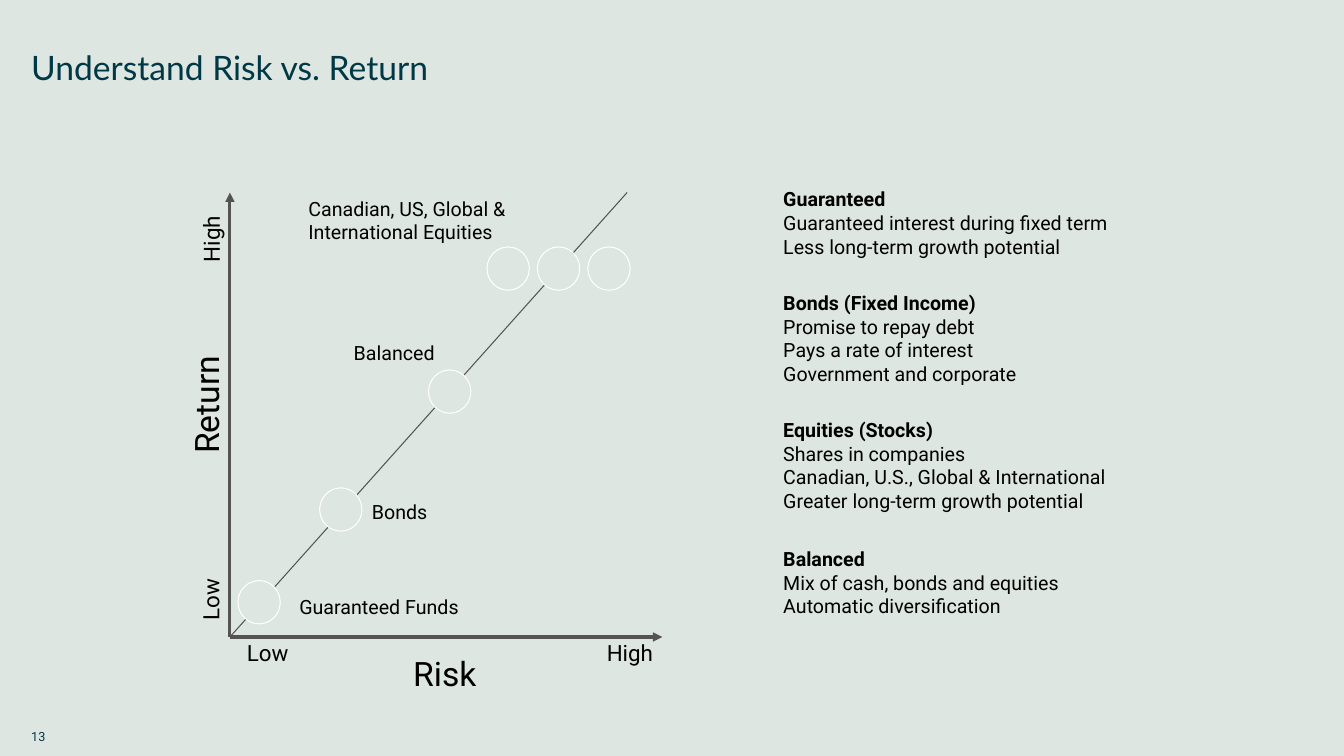
from lxml.etree import SubElement
from pptx import Presentation
from pptx.dml.color import RGBColor
from pptx.enum.shapes import MSO_CONNECTOR as Connector, MSO_SHAPE as Shape
from pptx.enum.text import MSO_ANCHOR as Anchor, MSO_AUTO_SIZE as AutoSize
from pptx.oxml.ns import qn
from pptx.util import Emu, Pt

PX = 9144
PAPER, TEAL, GREY, BLACK, WHITE = "DDE6E1", "003846", "545454", "000000", "FFFFFF"


def px(length):
    """Turn px (100 to the inch) into EMU."""
    return Emu(length * PX)


def color(value):
    """Turn a hex string into a colour."""
    return RGBColor.from_string(value)


def write(paragraph, text, size=14, bold=False, font="Roboto", ink=BLACK, spacing=None):
    """Add formatted text to a paragraph."""
    run = paragraph.add_run()
    run.text = text
    run.font.size, run.font.bold, run.font.name = Pt(size), bold, font
    run.font.color.rgb = color(ink)
    if spacing:
        paragraph.line_spacing = spacing


class RiskSlide:
    """Holds the style and the current slide."""

    def __init__(self, deck):
        """Add a blank slide on the paper colour."""
        self.slide = deck.slides.add_slide(deck.slide_layouts[6])
        self.slide.background.fill.solid()
        self.slide.background.fill.fore_color.rgb = color(PAPER)

    def frame(self, left, top, width, height, wrap=False, turn=0):
        """Add a text box and return its text frame."""
        box = self.slide.shapes.add_textbox(px(left), px(top), px(width), px(height))
        box.rotation = turn
        box.text_frame.word_wrap = wrap
        return box.text_frame

    def label(self, lines, left, top, width, height, wrap=False, turn=0,
              headed=False, **style):
        """Add lines of text, the first one bold when headed."""
        frame = self.frame(left, top, width, height, wrap, turn)
        frame.auto_size = AutoSize.SHAPE_TO_FIT_TEXT
        for index, line in enumerate(lines):
            paragraph = frame.add_paragraph() if index else frame.paragraphs[0]
            write(paragraph, line, bold=headed and index == 0, **style)

    def heading(self, text, left, top, width, height, inset=0, anchor=Anchor.TOP, **style):
        """Add text without side margins."""
        frame = self.frame(left, top, width, height, wrap=True)
        frame.margin_left = frame.margin_right = frame.margin_bottom = 0
        frame.margin_top = px(inset)
        frame.vertical_anchor = anchor
        write(frame.paragraphs[0], text, ink=TEAL, **style)

    def line(self, start, end, weight, arrow=False):
        """Draw a straight line, with an arrowhead at its end if asked."""
        line = self.slide.shapes.add_connector(
            Connector.STRAIGHT, *map(px, start), *map(px, end))
        line.line.color.rgb = color(GREY)
        line.line.width = Pt(weight)
        if arrow:
            SubElement(line.line._get_or_add_ln(), qn("a:tailEnd"), type="triangle")
        SubElement(line._element.spPr, qn("a:effectLst"))

    def fund(self, left, top):
        """Draw the circle of one fund."""
        circle = self.slide.shapes.add_shape(Shape.OVAL, px(left), px(top), px(42), px(43))
        circle.shadow.inherit = False
        circle.fill.solid()
        circle.fill.fore_color.rgb = color(PAPER)
        circle.line.color.rgb = color(WHITE)
        circle.line.width = Pt(0.75)


def main():
    """Build the slide and save it."""
    deck = Presentation()
    deck.slide_width, deck.slide_height = px(1333), px(750)
    page = RiskSlide(deck)
    page.heading("13", 31, 723, 35, 16, anchor=Anchor.MIDDLE, size=9)
    page.heading("Understand Risk vs. Return", 31, 31, 1270, 80, inset=20,
                 size=24, font="Lato", spacing=0.9)

    origin = (228, 632)
    page.line(origin, (228, 191), 2.25, arrow=True)
    page.line(origin, (657, 632), 2.25, arrow=True)
    page.line(origin, (622, 191), 0.75)

    page.label(["Return"], 142, 373, 124, 50, turn=270, size=24)
    page.label(["Risk"], 400, 643, 84, 50, size=24)
    for mark, left, top, width, turn in (
            ("Low", 235, 629, 62, 0), ("High", 592, 629, 69, 0),
            ("Low", 178, 576, 62, 270), ("High", 175, 217, 69, 270)):
        page.label([mark], left, top, width, 37, turn=turn, size=16)

    equities = [(483 + 50 * step, 245) for step in range(3)]
    for place in [(236, 576), (317, 484), (425, 367), *equities]:
        page.fund(*place)
    page.label(["Guaranteed Funds"], 287, 585, 183, 34)
    page.label(["Bonds"], 359, 491, 76, 34)
    page.label(["Balanced"], 341, 333, 102, 34)
    page.label(["Canadian, US, Global &", "International Equities"], 296, 190, 228, 57)

    for top, height, notes in (
            (181, 81, ["Guaranteed", "Guaranteed interest during fixed term",
                       "Less long-term growth potential"]),
            (284, 104, ["Bonds (Fixed Income)", "Promise to repay debt",
                        "Pays a rate of interest", "Government and corporate"]),
            (410, 104, ["Equities (Stocks)", "Shares in companies",
                        "Canadian, U.S., Global & International",
                        "Greater long-term growth potential"]),
            (538, 81, ["Balanced", "Mix of cash, bonds and equities",
                       "Automatic diversification"])):
        page.label(notes, 767, top, 367, height, wrap=True, headed=True)

    deck.save("out.pptx")


if __name__ == "__main__":
    main()
